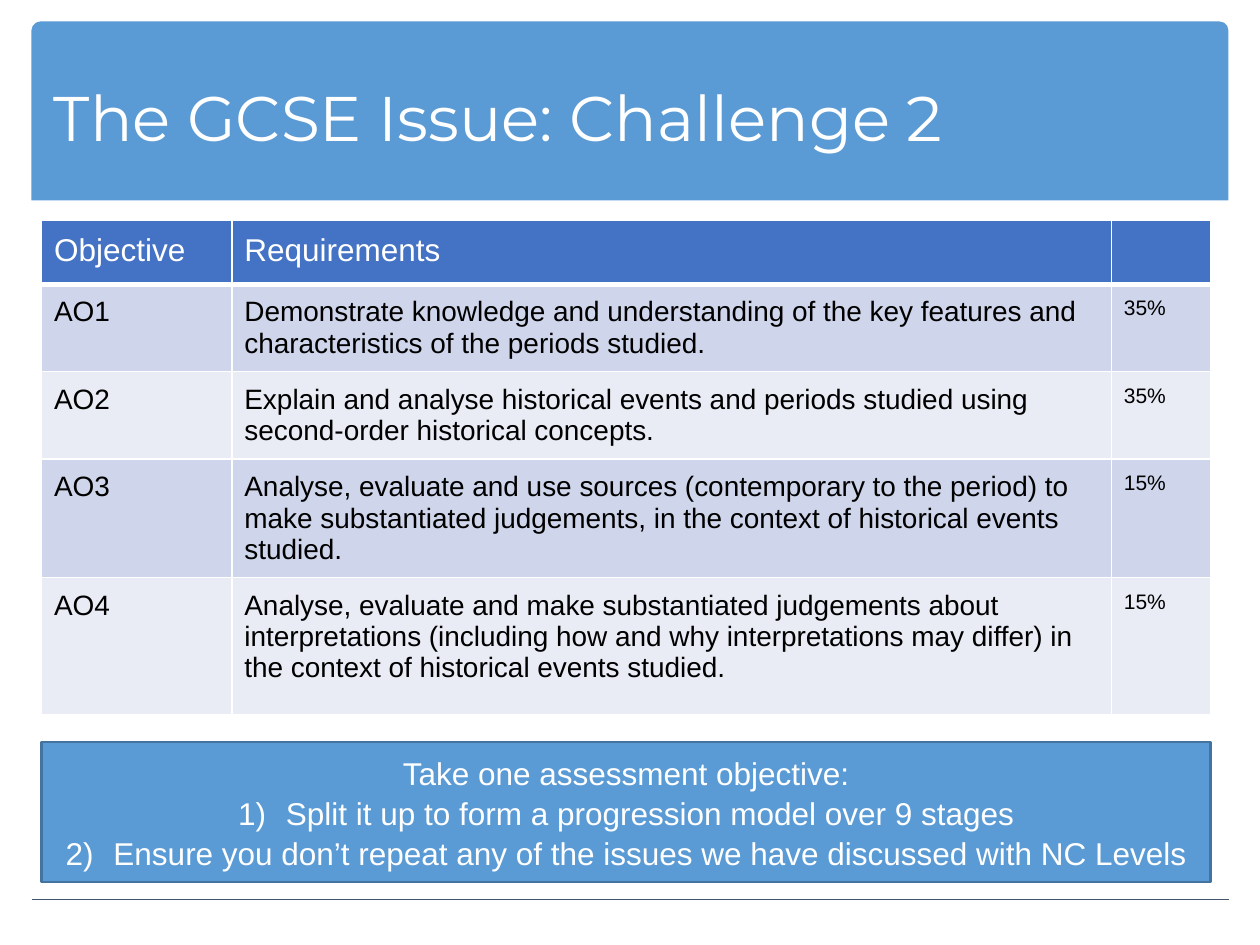
"""Build the GCSE assessment objectives slide."""
from lxml import etree
from pptx import Presentation
from pptx.dml.color import RGBColor
from pptx.enum.shapes import MSO_CONNECTOR, MSO_SHAPE
from pptx.enum.text import MSO_ANCHOR, PP_ALIGN
from pptx.oxml.ns import qn
from pptx.util import Inches, Pt

STRAIGHT = MSO_CONNECTOR.STRAIGHT
BANNER = MSO_SHAPE.ROUND_2_SAME_RECTANGLE
RECTANGLE = MSO_SHAPE.RECTANGLE
MIDDLE = MSO_ANCHOR.MIDDLE
LEFT, CENTER = PP_ALIGN.LEFT, PP_ALIGN.CENTER

COLORS = {
    "white": "FFFFFF", "black": "000000", "blue": "5B9BD5", "edge": "43739E",
    "rule": "44546A", "header": "4472C4", "odd": "CFD5EA", "even": "E9EBF5",
}
COLUMNS, ROWS = 100, 75
MARGIN, CONTENT_WIDTH = 3.3, 92.8

OBJECTIVES = [
    ("Objective", "Requirements", ""),
    ("AO1", "Demonstrate knowledge and understanding of the key features and "
     "characteristics of the periods studied.", "35%"),
    ("AO2", "Explain and analyse historical events and periods studied using "
     "second-order historical concepts.", "35%"),
    ("AO3", "Analyse, evaluate and use sources (contemporary to the period) to make "
     "substantiated judgements, in the context of historical events studied.", "15%"),
    ("AO4", "Analyse, evaluate and make substantiated judgements about "
     "interpretations (including how and why interpretations may differ) in the "
     "context of historical events studied.", "15%"),
]
TASK = "Take one assessment objective:"
STEPS = [
    "Split it up to form a progression model over 9 stages",
    "Ensure you don’t repeat any of the issues we have discussed with NC Levels",
]


def color(name):
    return RGBColor.from_string(COLORS[name])


def write(para, text, size=18, font="Arial", ink="white", align=LEFT,
          numbered=False, spacing=None):
    if numbered:
        properties = para._p.get_or_add_pPr()
        properties.set("marL", str(Inches(0.38)))
        properties.set("indent", str(-Inches(0.38)))
        etree.SubElement(properties, qn("a:buAutoNum"), type="arabicParenR")
    para.alignment = align
    if spacing:
        para.line_spacing = spacing
    para.font.size = Pt(size)
    if text:
        span = para.add_run()
        span.text = text
        span.font.size = Pt(size)
        span.font.name = font
        span.font.color.rgb = color(ink)


class SlideBuilder:
    def __init__(self, deck):
        self.deck = deck
        self.page = deck.slides.add_slide(deck.slide_layouts[6])

    def across(self, columns):
        return round(self.deck.slide_width * columns / COLUMNS)

    def down(self, rows):
        return round(self.deck.slide_height * rows / ROWS)

    def place(self, left, top, width, height):
        return self.across(left), self.down(top), self.across(width), self.down(height)

    def panel(self, kind, area, fill, edge=None):
        shape = self.page.shapes.add_shape(kind, *self.place(*area))
        shape.shadow.inherit = False
        shape.fill.solid()
        shape.fill.fore_color.rgb = color(fill)
        if edge:
            shape.line.color.rgb = color(edge)
            shape.line.width = Pt(1.5)
        else:
            shape.line.fill.background()
        return shape

    def rule(self, left, right, top):
        line = self.page.shapes.add_connector(
            STRAIGHT, self.across(left), self.down(top), self.across(right), self.down(top))
        line.line.color.rgb = color("rule")
        line.line.width = Pt(1)
        etree.SubElement(line._element.spPr, qn("a:effectLst"))

    def title(self, text, area):
        box = self.page.shapes.add_textbox(*self.place(*area))
        box.text_frame.word_wrap = True
        box.text_frame.vertical_anchor = MIDDLE
        write(box.text_frame.paragraphs[0], text, size=36, font="Montserrat")

    def task(self, heading, steps, area):
        frame = self.panel(RECTANGLE, area, "blue", "edge").text_frame
        frame.word_wrap = True
        frame.vertical_anchor = MIDDLE
        write(frame.paragraphs[0], heading, align=CENTER, spacing=1.05)
        for step in steps:
            write(frame.add_paragraph(), step, align=CENTER, numbered=True, spacing=1.05)

    def border(self, cell, bottom):
        properties = cell._tc.get_or_add_tcPr()
        for side, width in (("L", 1), ("R", 1), ("T", 1), ("B", bottom)):
            line = etree.SubElement(properties, qn(f"a:ln{side}"), w=str(Pt(width)))
            fill = etree.SubElement(line, qn("a:solidFill"))
            etree.SubElement(fill, qn("a:srgbClr"), val=COLORS["white"])

    def table(self, records, left, top, widths, heights):
        area = self.place(left, top, sum(widths), sum(heights))
        table = self.page.shapes.add_table(len(records), len(widths), *area).table
        for column, width in zip(table.columns, widths):
            column.width = self.across(width)
        for index, (row, height, record) in enumerate(zip(table.rows, heights, records)):
            row.height = self.down(height)
            header = index == 0
            band = "header" if header else ("even", "odd")[index % 2]
            for cell, text, size in zip(row.cells, record, (16, 16, 12)):
                self.border(cell, 3 if header else 1)
                cell.margin_left = cell.margin_top = cell.margin_bottom = Inches(0.1)
                cell.margin_right = Inches(0.21)
                cell.fill.solid()
                cell.fill.fore_color.rgb = color(band)
                write(cell.text_frame.paragraphs[0], text, size=18 if header else size,
                      ink="white" if header else "black")


def main():
    deck = Presentation()
    deck.slide_width, deck.slide_height = Inches(10), Inches(7.5)
    builder = SlideBuilder(deck)
    banner = builder.panel(BANNER, (2.5, 1.7, 95, 14.2), "blue")
    banner.adjustments[0] = 0.05
    builder.rule(2.5, 97.5, 71.4)
    builder.table(OBJECTIVES, MARGIN, 17.5, (15.1, 69.8, 7.9), (3.9, 6.2, 6.2, 8.6, 10.9))
    builder.title("The GCSE Issue: Challenge 2", (MARGIN, 3, 82.1, 12.5))
    builder.task(TASK, STEPS, (MARGIN, 58.9, CONTENT_WIDTH, 11.1))
    deck.save("out.pptx")


if __name__ == "__main__":
    main()
